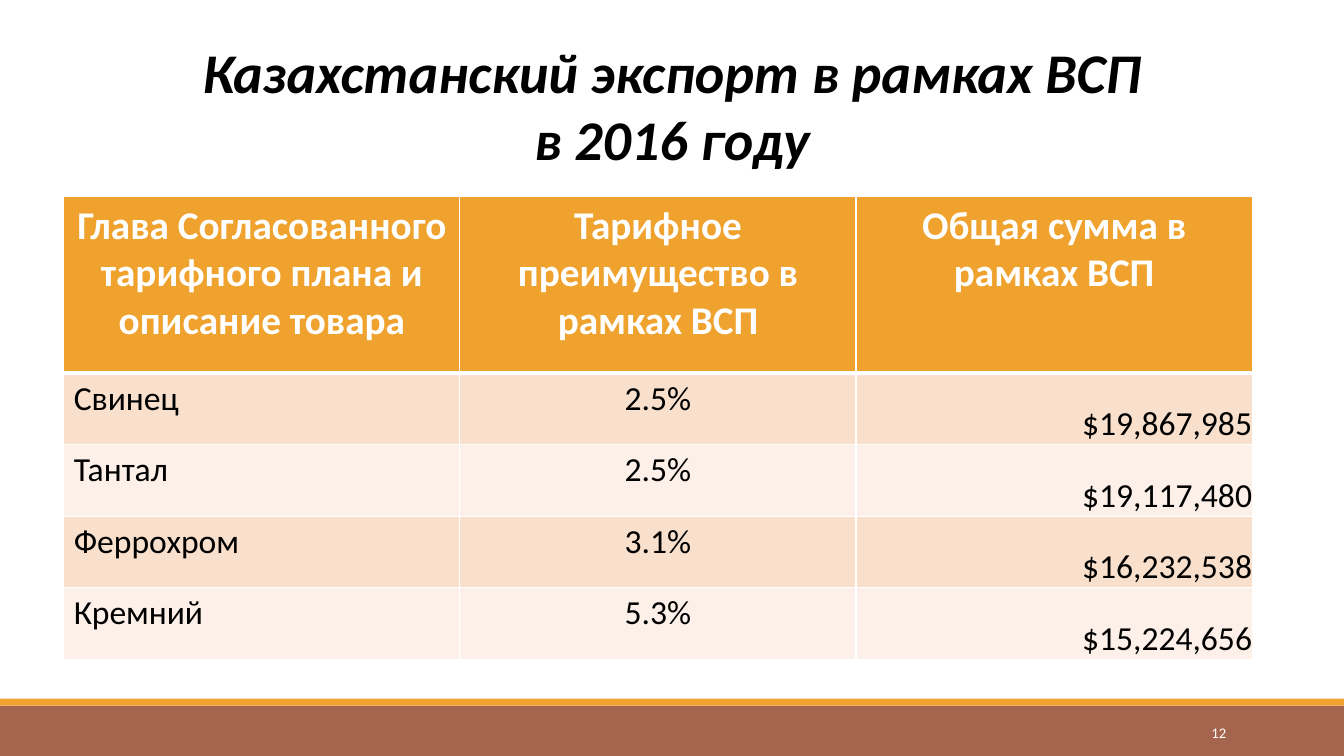
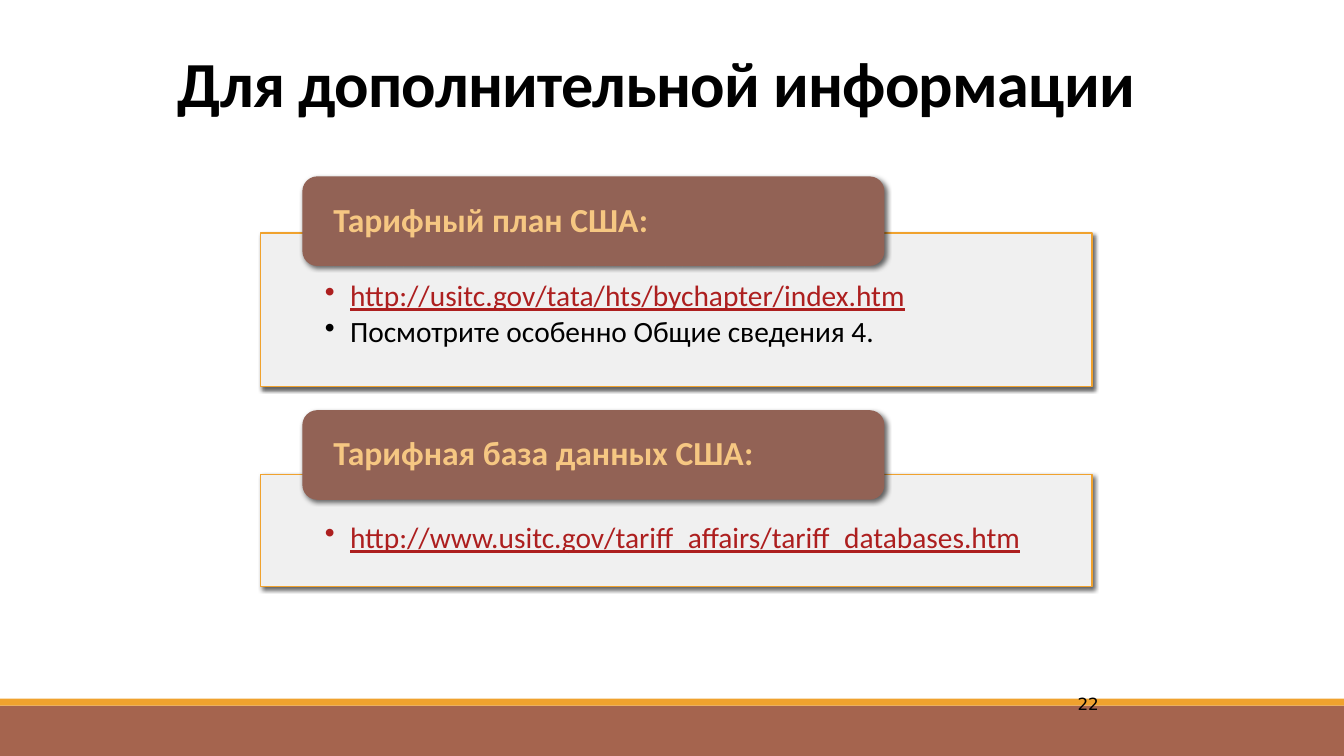
from dataclasses import dataclass
from typing import NamedTuple

from lxml import etree
from pptx import Presentation
from pptx.dml.color import RGBColor
from pptx.enum.shapes import MSO_SHAPE
from pptx.enum.text import MSO_ANCHOR, PP_ALIGN
from pptx.oxml.ns import qn
from pptx.util import Pt

RECT, ROUNDED = MSO_SHAPE.RECTANGLE, MSO_SHAPE.ROUNDED_RECTANGLE
LEFT, CENTER, RIGHT = PP_ALIGN.LEFT, PP_ALIGN.CENTER, PP_ALIGN.RIGHT
TOP, MIDDLE, BOTTOM = MSO_ANCHOR.TOP, MSO_ANCHOR.MIDDLE, MSO_ANCHOR.BOTTOM


class Box(NamedTuple):
    left: float
    top: float
    width: float
    height: float

    def points(self):
        return [Pt(length) for length in self]


@dataclass(frozen=True)
class Style:
    size: float
    color: str
    bold: bool = False
    italic: bool = False
    underline: bool = False
    font: str = "Calibri"
    spacing: float = 0


class Theme:
    page = Box(0, 0, 960, 540)
    band, accent = "A5644E", "F0A22E"
    tab, panel = "926255", "F0F0F0"
    border = "FFFFFF"
    stripes = ("F9E0CD", "FCF0E8")
    table_title = Style(40, "000000", bold=True, italic=True)
    links_title = Style(45.9, "000000", bold=True, spacing=-0.5)
    table_head = Style(28, "FFFFFF", bold=True)
    table_body = Style(24, "000000")
    tab_text = Style(24, "F6C782", bold=True)
    item = Style(21, "000000")
    link = Style(21, "AD1F1F", underline=True)
    band_number = Style(10.5, "FFFFFF")
    plain_number = Style(12, "000000", font="DejaVu Sans")


EXPORT_HEADS = (
    "Глава Согласованного тарифного плана и описание товара",
    "Тарифное преимущество в рамках ВСП",
    "Общая сумма в рамках ВСП",
)
EXPORT_ROWS = (
    ("Свинец", "2.5%", "$19,867,985"),
    ("Тантал", "2.5%", "$19,117,480"),
    ("Феррохром", "3.1%", "$16,232,538"),
    ("Кремний", "5.3%", "$15,224,656"),
)
TARIFF_PLAN_ITEMS = (
    ("http://usitc.gov/tata/hts/bychapter/index.htm", Theme.link),
    ("Посмотрите особенно Общие сведения 4.", Theme.item),
)
TARIFF_DATABASE_ITEMS = (
    ("http://www.usitc.gov/tariff_affairs/tariff_databases.htm", Theme.link),
)


def apply_style(para, style):
    font = para.font
    font.name, font.size = style.font, Pt(style.size)
    font.bold, font.italic, font.underline = style.bold, style.italic, style.underline
    font.color.rgb = RGBColor.from_string(style.color)
    if style.spacing:
        for span in para.runs:
            span.font.size = Pt(style.size)
            span._r.get_or_add_rPr().set("spc", str(round(style.spacing * 100)))


def write_lines(frame, lines, align=LEFT, line_spacing=None, space_after=None):
    """Fill a text frame with (text, style) paragraphs."""
    for index, (text, style) in enumerate(lines):
        para = frame.add_paragraph() if index else frame.paragraphs[0]
        para.add_run().text = text
        para.alignment = align
        if line_spacing:
            para.line_spacing = line_spacing
        if space_after:
            para.space_after = Pt(space_after)
        apply_style(para, style)


def set_margins(target, left, top, right, bottom):
    target.margin_left, target.margin_top = Pt(left), Pt(top)
    target.margin_right, target.margin_bottom = Pt(right), Pt(bottom)


def add_text(page, box, lines, align, anchor=TOP, line_spacing=None):
    frame = page.shapes.add_textbox(*box.points()).text_frame
    frame.word_wrap = True
    frame.vertical_anchor = anchor
    write_lines(frame, lines, align, line_spacing)


def add_block(page, box, fill, outline=None, kind=RECT):
    block = page.shapes.add_shape(kind, *box.points())
    block.shadow.inherit = False
    block.fill.solid()
    block.fill.fore_color.rgb = RGBColor.from_string(fill)
    if outline:
        block.line.color.rgb = RGBColor.from_string(outline)
        block.line.width = Pt(1)
    else:
        block.line.fill.background()
    return block


def cast_shadow(block, blur):
    effects = block._element.spPr.find(qn("a:effectLst"))
    shadow = etree.SubElement(
        effects, qn("a:outerShdw"), blurRad=str(Pt(blur)), dist=str(Pt(2)),
        dir=str(45 * 60000), algn="tl", rotWithShape="0")
    color = etree.SubElement(shadow, qn("a:srgbClr"), val="000000")
    etree.SubElement(color, qn("a:alpha"), val="60000")


def add_bullet(para, indent):
    properties = para._p.get_or_add_pPr()
    properties.set("marL", str(Pt(indent)))
    properties.set("indent", str(-Pt(indent)))
    etree.SubElement(properties, qn("a:buChar"), char="•")


def add_page(deck):
    """Add a blank slide with the two bands along its foot."""
    page = deck.slides.add_slide(deck.slide_layouts[6])
    width, height = Theme.page.width, Theme.page.height
    add_block(page, Box(0, height - 36, width, 36), Theme.band)
    add_block(page, Box(0, height - 41, width, 5), Theme.accent)
    return page


def set_borders(cell, top, bottom):
    properties = cell._tc.get_or_add_tcPr()
    for side, width in (("L", 1), ("R", 1), ("T", top), ("B", bottom)):
        line = etree.SubElement(properties, qn(f"a:ln{side}"), w=str(Pt(width)))
        fill = etree.SubElement(line, qn("a:solidFill"))
        etree.SubElement(fill, qn("a:srgbClr"), val=Theme.border)


def add_export_table(page, box, heads, rows, head_height):
    table = page.shapes.add_table(len(rows) + 1, len(heads), *box.points()).table
    for column in table.columns:
        column.width = Pt(box.width / len(heads))
    row_height = (box.height - head_height) / len(rows)
    for row_index, values in enumerate((heads, *rows)):
        is_head = row_index == 0
        table.rows[row_index].height = Pt(head_height if is_head else row_height)
        fill = Theme.accent if is_head else Theme.stripes[(row_index - 1) % 2]
        style = Theme.table_head if is_head else Theme.table_body
        aligns = (CENTER,) * 3 if is_head else (LEFT, CENTER, RIGHT)
        for column_index, (value, align) in enumerate(zip(values, aligns)):
            cell = table.cell(row_index, column_index)
            set_borders(cell, top=3 if row_index == 1 else 1, bottom=3 if is_head else 1)
            cell.fill.solid()
            cell.fill.fore_color.rgb = RGBColor.from_string(fill)
            if align == RIGHT:
                set_margins(cell, 0, 0, 0, 0)
                cell.vertical_anchor = BOTTOM
            write_lines(cell.text_frame, [(value, style)], align)


def add_link_card(page, box, heading, items, tab_rise):
    """Place a panel of bullets with a heading tab rising above its top edge."""
    panel_box = Box(box.left, box.top + tab_rise, box.width, box.height - tab_rise)
    panel = add_block(page, panel_box, Theme.panel, outline=Theme.accent)
    cast_shadow(panel, 3)
    frame = panel.text_frame
    frame.word_wrap = True
    frame.vertical_anchor = TOP
    set_margins(frame, 46, 34.5, 46, 11.5)
    write_lines(frame, items, line_spacing=0.9, space_after=3)
    for para in frame.paragraphs:
        add_bullet(para, 18)

    tab_box = Box(box.left + 30, box.top, box.width * 0.7, 64)
    tab = add_block(page, tab_box, Theme.tab, kind=ROUNDED)
    cast_shadow(tab, 3.5)
    frame = tab.text_frame
    frame.word_wrap = True
    frame.vertical_anchor = MIDDLE
    set_margins(frame, 19, 3, 19, 3)
    write_lines(frame, [(heading, Theme.tab_text)], line_spacing=0.9)


def build_export_page(deck):
    page = add_page(deck)
    title = ("Казахстанский экспорт в рамках ВСП", "в 2016 году")
    add_text(page, Box(120, 36, 720, 90),
             [(line, Theme.table_title) for line in title], CENTER, BOTTOM)
    add_export_table(page, Box(45.5, 140.5, 849, 330.5), EXPORT_HEADS, EXPORT_ROWS, 126)
    add_text(page, Box(780, 508.5, 103, 29), [("12", Theme.band_number)], RIGHT, MIDDLE)


def build_links_page(deck):
    page = add_page(deck)
    add_text(page, Box(120, 0, 720, 90),
             [("Для дополнительной информации", Theme.links_title)], LEFT, BOTTOM, 0.85)
    add_link_card(page, Box(186, 126, 594, 150), "Тарифный план США:",
                  TARIFF_PLAN_ITEMS, tab_rise=40.5)
    add_link_card(page, Box(186, 293, 594, 126), "Тарифная база данных США:",
                  TARIFF_DATABASE_ITEMS, tab_rise=46)
    add_text(page, Box(636, 492, 156, 37), [("22", Theme.plain_number)], RIGHT)


def main():
    deck = Presentation()
    deck.slide_width, deck.slide_height = Pt(Theme.page.width), Pt(Theme.page.height)
    build_export_page(deck)
    build_links_page(deck)
    deck.save("out.pptx")


if __name__ == "__main__":
    main()
